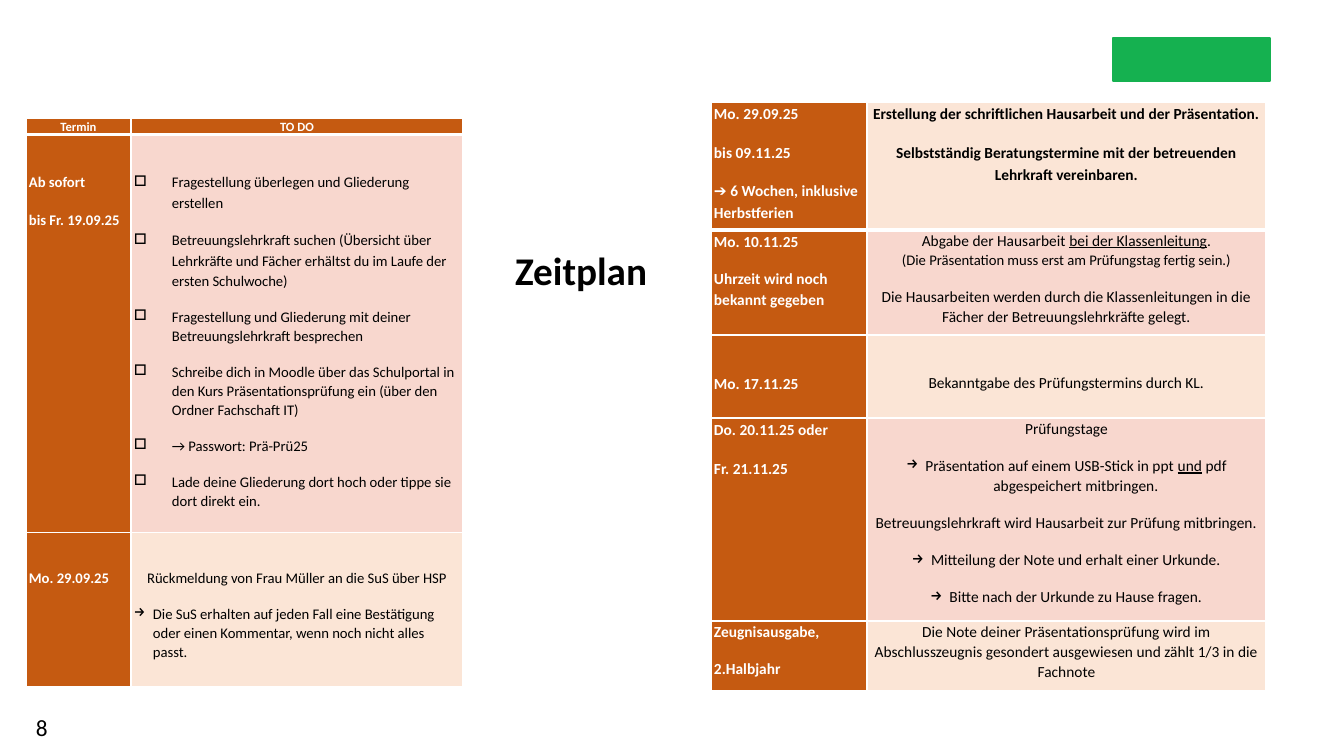
from lxml.etree import SubElement
from pptx import Presentation
from pptx.dml.color import RGBColor
from pptx.enum.shapes import MSO_SHAPE
from pptx.enum.text import MSO_ANCHOR, MSO_AUTO_SIZE, PP_ALIGN
from pptx.oxml import parse_xml
from pptx.oxml.ns import nsdecls, qn
from pptx.util import Pt

PX = 914400 / 100.8
FONT = "Calibri"
BLACK, WHITE, GREEN = "000000", "FFFFFF", "15B150"
ORANGE, ROSE, PEACH = "C55A11", "F8D7CE", "FBE5D6"

TITLE, TITLE_BOX = "Zeitplan", (505, 241, 162, 57)
NUMBER, NUMBER_BOX = "8", (26, 707, 94, 40)
GREEN_BOX = (1113, 38, 157, 43)

# Paragraph style: alignment, line spacing, bullet, indent in px
LEFT = (PP_ALIGN.LEFT, 1.07, None, 0)
LEFT_WIDE = (PP_ALIGN.LEFT, 1.15, None, 0)
CENTER = (PP_ALIGN.CENTER, 1.07, None, 0)
CENTER_WIDE = (PP_ALIGN.CENTER, 1.15, None, 0)
BOX = (PP_ALIGN.LEFT, 1.07, "□", 38)
BOX_WIDE = (PP_ALIGN.LEFT, 1.15, "□", 38)
ARROW = (PP_ALIGN.LEFT, 1.07, "→", 19)
ARROW_CENTER = (PP_ALIGN.CENTER, 1.07, "→", 19)

# Row: height, top margin, text size, fill, bold text, dates, tasks
# _..._ is underlined; text after \n is set smaller
START_ROWS = [
    (16, 0, 9, ORANGE, True, [(CENTER, "Termin")], [(CENTER, "TO DO")]),
    (398, 37, 10.5, ROSE, False,
     [(LEFT_WIDE, "Ab sofort"), (LEFT_WIDE, "bis Fr. 19.09.25")],
     [(BOX_WIDE, "Fragestellung überlegen und Gliederung erstellen"),
      (BOX_WIDE, "Betreuungslehrkraft suchen (Übersicht über Lehrkräfte und "
                 "Fächer erhältst du im Laufe der ersten Schulwoche)"),
      (BOX, "Fragestellung und Gliederung mit deiner Betreuungslehrkraft besprechen"),
      (BOX, "Schreibe dich in Moodle über das Schulportal in den Kurs "
            "Präsentationsprüfung ein (über den Ordner Fachschaft IT)"),
      (BOX, "→ Passwort: Prä-Prü25"),
      (BOX, "Lade deine Gliederung dort hoch oder tippe sie dort direkt ein.")]),
    (154, 36, 10.5, PEACH, False,
     [(LEFT, "Mo. 29.09.25")],
     [(CENTER, "Rückmeldung von Frau Müller an die SuS über HSP"),
      (ARROW, "Die SuS erhalten auf jeden Fall eine Bestätigung oder einen "
              "Kommentar, wenn noch nicht alles passt.")]),
]
EXAM_ROWS = [
    (128, 0, 11, PEACH, True,
     [(LEFT_WIDE, "Mo. 29.09.25"), (LEFT_WIDE, "bis 09.11.25"),
      (LEFT_WIDE, "➔ 6 Wochen, inklusive Herbstferien")],
     [(CENTER_WIDE, "Erstellung der schriftlichen Hausarbeit und der Präsentation."),
      (CENTER_WIDE, "Selbstständig Beratungstermine mit der betreuenden "
                    "Lehrkraft vereinbaren.")]),
    (105, 0, 11, ROSE, False,
     [(LEFT_WIDE, "Mo. 10.11.25"), (LEFT, "Uhrzeit wird noch bekannt gegeben")],
     [(CENTER, "Abgabe der Hausarbeit _bei der Klassenleitung_.\n"
               "(Die Präsentation muss erst am Prüfungstag fertig sein.)"),
      (CENTER, "Die Hausarbeiten werden durch die Klassenleitungen in die "
               "Fächer der Betreuungslehrkräfte gelegt.")]),
    (83, 37, 11, PEACH, False,
     [(LEFT_WIDE, "Mo. 17.11.25")],
     [(CENTER, "Bekanntgabe des Prüfungstermins durch KL.")]),
    (203, 0, 11, ROSE, False,
     [(LEFT_WIDE, "Do. 20.11.25 oder"), (LEFT_WIDE, "Fr. 21.11.25")],
     [(CENTER, "Prüfungstage"),
      (ARROW_CENTER, "Präsentation auf einem USB-Stick in ppt _und_ pdf "
                     "abgespeichert mitbringen."),
      (CENTER, "Betreuungslehrkraft wird Hausarbeit zur Prüfung mitbringen."),
      (ARROW_CENTER, "Mitteilung der Note und erhalt einer Urkunde."),
      (ARROW_CENTER, "Bitte nach der Urkunde zu Hause fragen.")]),
    (70, 0, 11, PEACH, False,
     [(LEFT, "Zeugnisausgabe,"), (LEFT, "2.Halbjahr")],
     [(CENTER, "Die Note deiner Präsentationsprüfung wird im Abschlusszeugnis "
               "gesondert ausgewiesen und zählt 1/3 in die Fachnote")]),
]
# Table: left, top, column widths, rows
TABLES = [(26, 118, (105, 332), START_ROWS), (711, 102, (156, 399), EXAM_ROWS)]


def px(n):
    return round(n * PX)


def rgb(color):
    return RGBColor.from_string(color)


def set_font(font, size, color, bold):
    font.name, font.size, font.bold = FONT, Pt(size), bold
    font.color.rgb = rgb(color)


def place(sp, box):
    sp.left, sp.top, sp.width, sp.height = map(px, box)


def fill_paragraph(p, style, text, size, color, bold, first):
    p.alignment, p.line_spacing, bullet, indent = style
    p.space_before, p.space_after = Pt(0 if first else 6), Pt(6)
    if bullet:
        pPr = p._p.get_or_add_pPr()
        pPr.set("marL", str(px(indent)))
        pPr.set("indent", str(-px(indent)))
        SubElement(pPr, qn("a:buChar")).set("char", bullet)
    for row, line in enumerate(text.split("\n")):
        if row:
            p.add_line_break()
        for i, part in enumerate(line.split("_")):
            r = p.add_run()
            r.text = part
            set_font(r.font, size - row / 2, color, bold)
            if i % 2:
                r.font.underline = True


def add_borders(cell, bottom):
    tcPr = cell._tc.get_or_add_tcPr()
    sides = {"lnL": 1, "lnR": 1, "lnT": 1, "lnB": bottom}
    for i, (side, width) in enumerate(sides.items()):
        tcPr.insert(i, parse_xml(
            f'<a:{side} {nsdecls("a")} w="{Pt(width)}"><a:solidFill>'
            f'<a:srgbClr val="{WHITE}"/></a:solidFill></a:{side}>'))


def fill_cell(cell, paragraphs, fill, size, color, bold, top, bottom):
    cell.margin_left = cell.margin_right = px(3)
    cell.margin_top, cell.margin_bottom = px(top), 0
    cell.vertical_anchor = MSO_ANCHOR.TOP
    cell.fill.solid()
    cell.fill.fore_color.rgb = rgb(fill)
    add_borders(cell, bottom)
    tf = cell.text_frame
    for i, (style, text) in enumerate(paragraphs):
        p = tf.add_paragraph() if i else tf.paragraphs[0]
        fill_paragraph(p, style, text, size, color, bold, i == 0)


def add_schedule(slide, left, top, widths, rows):
    box = (left, top, sum(widths), sum(row[0] for row in rows))
    table = slide.shapes.add_table(len(rows), len(widths), *map(px, box)).table
    table.first_row = table.horz_banding = False
    for column, width in zip(table.columns, widths):
        column.width = px(width)
    for i, (height, gap, size, fill, bold, dates, tasks) in enumerate(rows):
        table.rows[i].height = px(height)
        bottom = 1 if i else 3
        fill_cell(table.cell(i, 0), dates, ORANGE, size, WHITE, True, gap, bottom)
        color = WHITE if fill == ORANGE else BLACK
        fill_cell(table.cell(i, 1), tasks, fill, size, color, bold, gap, bottom)


def main():
    prs = Presentation()
    prs.slide_width, prs.slide_height = px(1344), px(756)
    slide = prs.slides.add_slide(prs.slide_layouts[5])

    bar = slide.shapes.add_shape(MSO_SHAPE.RECTANGLE, *map(px, GREEN_BOX))
    bar.shadow.inherit = False
    bar.fill.solid()
    bar.fill.fore_color.rgb = bar.line.color.rgb = rgb(GREEN)
    bar.line.width = Pt(1)

    title = slide.shapes.title
    place(title, TITLE_BOX)
    number = slide.shapes.add_textbox(*map(px, NUMBER_BOX))
    for sp, text, size, bold in ((title, TITLE, 28, True), (number, NUMBER, 16.6, False)):
        tf = sp.text_frame
        tf.text = text
        tf.word_wrap, tf.auto_size = True, MSO_AUTO_SIZE.NONE
        tf.vertical_anchor = MSO_ANCHOR.MIDDLE
        tf.paragraphs[0].alignment = PP_ALIGN.LEFT
        set_font(tf.paragraphs[0].runs[0].font, size, BLACK, bold)

    for table in TABLES:
        add_schedule(slide, *table)
    prs.save("out.pptx")


if __name__ == "__main__":
    main()
